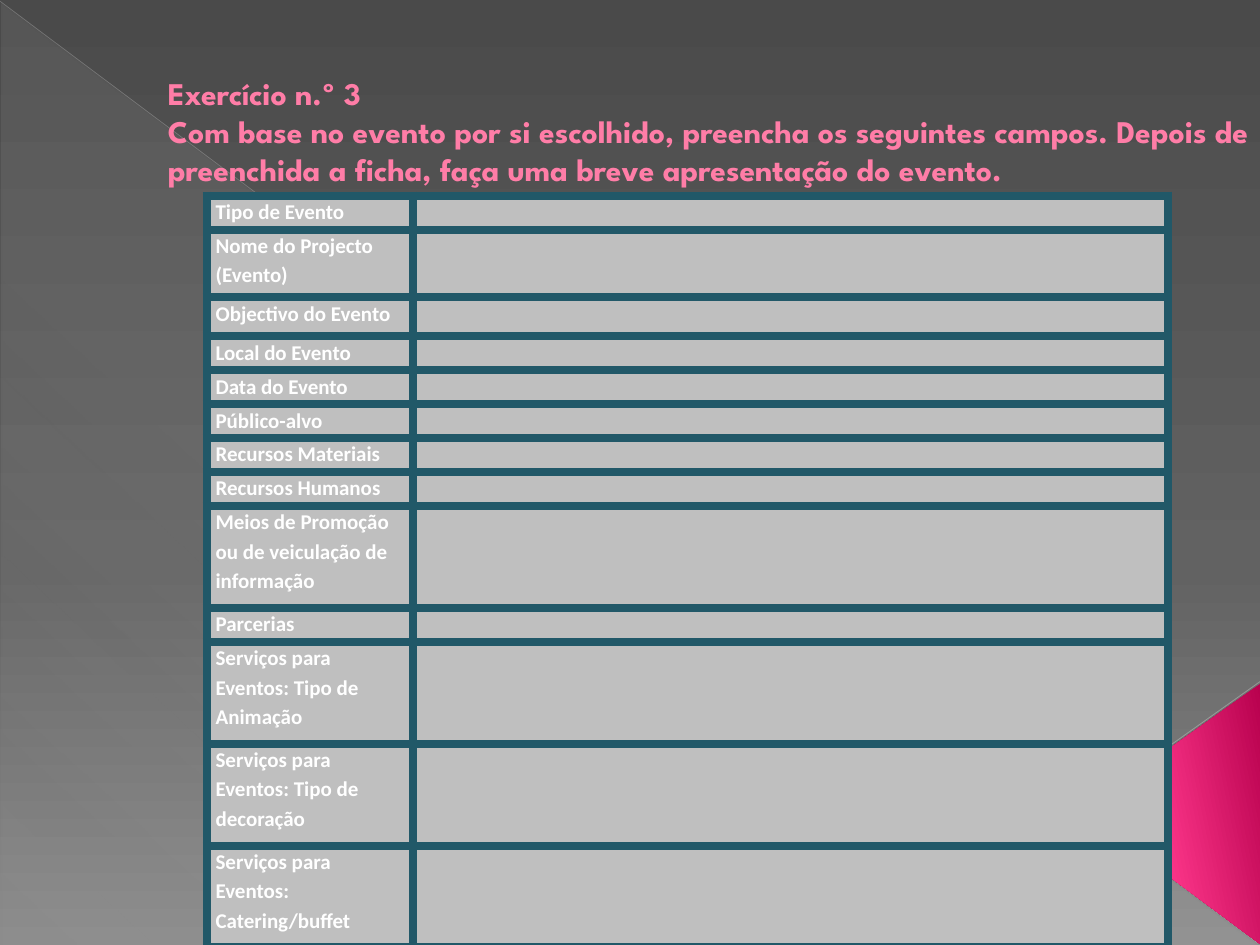
from lxml import etree
from pptx import Presentation
from pptx import util as u
from pptx.dml.color import RGBColor
from pptx.enum import shapes, text
from pptx.oxml import ns

Pt = u.Pt
PINK = RGBColor(0xFF, 0x7D, 0xA7)
WHITE = RGBColor(0xFF, 0xFF, 0xFF)
GREY = RGBColor(0xBF, 0xBF, 0xBF)
MIST = RGBColor(0xC6, 0xC6, 0xC6)
PALE = RGBColor(0xD2, 0xD2, 0xD2)
TEAL = RGBColor(0x21, 0x58, 0x68)
DARK = RGBColor(0x4A, 0x4A, 0x4A)
MID = RGBColor(0x62, 0x62, 0x62)
LIGHT = RGBColor(0x8C, 0x8C, 0x8C)
WINE = RGBColor(0xB8, 0x01, 0x4E)
ROSE = RGBColor(0xFF, 0x38, 0x8C)
BLUSH = RGBColor(0xFF, 0x9C, 0xB9)

TITLE = ("Exercício n.º 3\nCom base no evento por si escolhido, preencha os seguintes "
         "campos. Depois de preenchida a ficha, faça uma breve apresentação do evento.")
FIELDS = [
    ("Tipo de Evento", 19.4),
    ("Nome do Projecto (Evento)", 38.8),
    ("Objectivo do Evento", 22.3),
    ("Local do Evento", 19.4),
    ("Data do Evento", 19.4),
    ("Público-alvo", 19.4),
    ("Recursos Materiais", 19.4),
    ("Recursos Humanos", 19.4),
    ("Meios de Promoção ou de veiculação de informação", 58.2),
    ("Parcerias", 19.4),
    ("Serviços para Eventos: Tipo de Animação", 58.2),
    ("Serviços para Eventos: Tipo de decoração", 58.2),
    ("Serviços para Eventos: Catering/buffet", 58.2),
]


def node(up, tag, **atts):
    return etree.SubElement(up, ns.qn(tag), {k: str(v) for k, v in atts.items()})


def tint(up, color, alpha=100):
    clr = node(up, "a:srgbClr", val=color)
    if alpha < 100:
        node(clr, "a:alpha", val=alpha * 1000)


def blend(fill, root, stops, angle):
    fill.gradient()
    grad = root.find(".//" + ns.qn("a:gradFill"))
    items = grad.find(ns.qn("a:gsLst"))
    for old in list(items):
        items.remove(old)
    for pos, color, alpha in stops:
        tint(node(items, "a:gs", pos=pos * 1000), color, alpha)
    grad.find(ns.qn("a:lin")).set("ang", str(angle * 60000))


def write(frame, words, font="Calibri", size=12, color=WHITE, bold=True, space=None):
    para = frame.paragraphs[0]
    para.text = words
    para.alignment = text.PP_ALIGN.LEFT
    if space:
        para.line_spacing = space
    for run in para.runs:
        run.font.name = font
        run.font.size = Pt(size)
        run.font.bold = bold
        run.font.color.rgb = color
    if not words:
        node(para._p, "a:endParaRPr", sz=size * 100)


def wedge(slide, kind, box, stops, angle):
    shape = slide.shapes.add_shape(kind, *map(Pt, box))
    shape.shadow.inherit = False
    shape.line.fill.background()
    blend(shape.fill, shape._element.spPr, stops, angle)
    return shape


def rule(slide, ends, color, width, alpha):
    line = slide.shapes.add_connector(shapes.MSO_CONNECTOR.STRAIGHT, *map(Pt, ends))
    line.line.width = Pt(width)
    line.line.color.rgb = color
    clr = line._element.spPr.find(".//" + ns.qn("a:srgbClr"))
    node(clr, "a:alpha", val=alpha * 1000)
    node(line._element.spPr, "a:effectLst")


def scene(slide, x, y, w, h):
    blend(slide.background.fill, slide._element,
          [(0, DARK, 100), (60, MID, 100), (100, LIGHT, 100)], 90)
    kinds = shapes.MSO_SHAPE
    wedge(slide, kinds.RIGHT_TRIANGLE, (x + 0.7, y + 1.4, w - 1.4, h - 1.4),
          [(0, PALE, 10), (70, PALE, 8), (100, PALE, 1)], 133)
    rule(slide, (x, y + 0.7, x + w - 0.7, y + h - 0.7), GREY, 0.39, 35)
    rule(slide, (x + w, y + 389.5, x + w - 211, y + h - 0.7), MIST, 0.47, 45)
    tip = wedge(slide, kinds.ISOSCELES_TRIANGLE, (x + 594.7, y + 414, 149, 102.2),
                [(0, WINE, 100), (60, ROSE, 100), (100, BLUSH, 100)], 258)
    tip.rotation = 270
    tip.adjustments[0] = 0.51


def head(slide, x, y, w, h):
    frame = slide.shapes.add_textbox(*map(Pt, (x, y, w, h))).text_frame
    frame.word_wrap = True
    frame.vertical_anchor = text.MSO_ANCHOR.BOTTOM
    write(frame, TITLE, font="League Spartan", size=18, color=PINK)


def edge(cell, color, width):
    props = cell._tc.get_or_add_tcPr()
    for spot, side in enumerate(("a:lnL", "a:lnR", "a:lnT", "a:lnB")):
        line = node(props, side, w=Pt(width))
        tint(node(line, "a:solidFill"), color)
        props.insert(spot, line)


def form(slide, x, y, w, h):
    table = slide.shapes.add_table(len(FIELDS), 2, *map(Pt, (x, y, w, h))).table
    table.first_row = table.horz_banding = False
    label = 118
    for col, width in zip(table.columns, (label, w - label)):
        col.width = Pt(width)
    for row, (name, height) in zip(table.rows, FIELDS):
        row.height = Pt(height)
        for cell, words in zip(row.cells, (name, "")):
            cell.margin_left = cell.margin_right = Pt(5)
            cell.margin_top = cell.margin_bottom = 0
            cell.fill.solid()
            cell.fill.fore_color.rgb = GREY
            edge(cell, TEAL, 5.25)
            write(cell.text_frame, words, space=1.15)


def main():
    deck = Presentation()
    deck.slide_width, deck.slide_height = Pt(720), Pt(540)
    slide = deck.slides.add_slide(deck.slide_layouts[6])
    scene(slide, 0, 0, 720, 540)
    head(slide, 88.8, 16.6, 642, 94)
    form(slide, 118.2, 111.8, 549.2, 429.7)
    deck.save("out.pptx")


if __name__ == "__main__":
    main()
